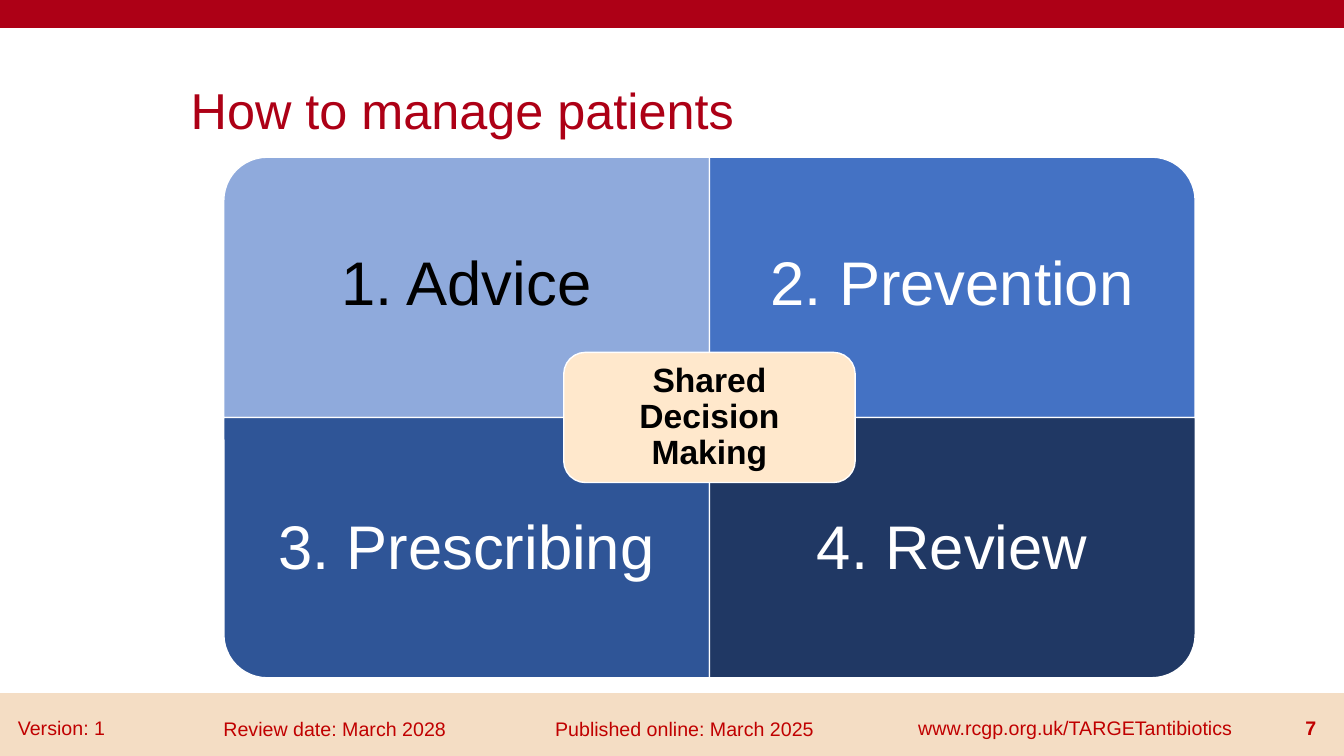
from dataclasses import dataclass

from pptx import Presentation
from pptx.dml.color import RGBColor
from pptx.enum.shapes import MSO_SHAPE
from pptx.enum.text import MSO_ANCHOR, PP_ALIGN
from pptx.util import Cm, Pt

COLORS = {
    "red": "AD0016", "footer": "C00000", "sand": "F4DDC4", "cream": "FFE8CC",
    "light": "8FAADC", "blue": "4472C4", "dark": "2F5597", "navy": "203864",
    "white": "FFFFFF", "black": "000000",
}
WIDTH, HEIGHT = 33.87, 19.05
CENTER_X, CENTER_Y = 17.88, 10.52
QUAD_W, QUAD_H = 12.24, 6.56
LABEL_H = QUAD_H * 0.75


@dataclass
class Quadrant:
    text: str
    col: int
    row: int
    rotation: int
    fill: str
    color: str = "white"


@dataclass
class FooterItem:
    text: str
    left: float
    top: float
    width: float
    align: PP_ALIGN = PP_ALIGN.LEFT
    bold: bool = False


QUADRANTS = [
    Quadrant("1. Advice", 0, 0, 270, "light", "black"),
    Quadrant("2. Prevention", 1, 0, 0, "blue"),
    Quadrant("3. Prescribing", 0, 1, 180, "dark"),
    Quadrant("4. Review", 1, 1, 90, "navy"),
]
FOOTER = [
    FooterItem("www.rcgp.org.uk/TARGETantibiotics", 22.89, 17.91, 9.27),
    FooterItem("7", 31.95, 17.91, 1.47, PP_ALIGN.RIGHT, True),
    FooterItem("Version: 1", 0.2, 17.91, 2.95),
    FooterItem("Review date: March 2028", 5.38, 17.93, 7.06),
    FooterItem("Published online: March 2025", 13.74, 17.94, 7.42),
]


def rgb(name: str) -> RGBColor:
    return RGBColor.from_string(COLORS[name])


def write(sp, text: str, *, size: float, color: str, bold: bool = False,
          align=PP_ALIGN.LEFT, anchor=MSO_ANCHOR.TOP, spacing: float = 1.0,
          inset: float | None = None) -> None:
    tf = sp.text_frame
    tf.word_wrap = True
    tf.vertical_anchor = anchor
    if inset is not None:
        tf.margin_left = tf.margin_right = tf.margin_top = tf.margin_bottom = Cm(inset)
    p = tf.paragraphs[0]
    p.alignment = align
    p.line_spacing = spacing
    r = p.add_run()
    r.text = text
    r.font.name = "Arial"
    r.font.size = Pt(size)
    r.font.bold = bold
    r.font.color.rgb = rgb(color)


def add_block(s, kind, left: float, top: float, width: float, height: float,
              fill: str, line: str):
    sp = s.shapes.add_shape(kind, Cm(left), Cm(top), Cm(width), Cm(height))
    sp.shadow.inherit = False
    sp.fill.solid()
    sp.fill.fore_color.rgb = rgb(fill)
    sp.line.color.rgb = rgb(line)
    sp.line.width = Pt(1)
    return sp


def add_quadrant(s, q: Quadrant) -> None:
    left = CENTER_X + (q.col - 1) * QUAD_W
    top = CENTER_Y + (q.row - 1) * QUAD_H
    w, h = (QUAD_H, QUAD_W) if q.rotation % 180 else (QUAD_W, QUAD_H)
    sp = add_block(s, MSO_SHAPE.ROUND_1_RECTANGLE, left + (QUAD_W - w) / 2,
                   top + (QUAD_H - h) / 2, w, h, q.fill, "white")
    sp.rotation = q.rotation
    label_top = top + q.row * (QUAD_H - LABEL_H)
    label = s.shapes.add_textbox(Cm(left), Cm(label_top), Cm(QUAD_W), Cm(LABEL_H))
    write(label, q.text, size=44, color=q.color, align=PP_ALIGN.CENTER, spacing=0.9,
          anchor=MSO_ANCHOR.TOP if q.row else MSO_ANCHOR.BOTTOM, inset=0.87)


def add_footer_item(s, item: FooterItem) -> None:
    sp = s.shapes.add_textbox(Cm(item.left), Cm(item.top), Cm(item.width), Cm(1.02))
    write(sp, item.text, size=14, color="footer", align=item.align, bold=item.bold)


def main() -> None:
    """Build the patient management slide."""
    prs = Presentation()
    prs.slide_width, prs.slide_height = Cm(WIDTH), Cm(HEIGHT)
    s = prs.slides.add_slide(prs.slide_layouts[5])

    add_block(s, MSO_SHAPE.RECTANGLE, 0, 17.47, WIDTH, 1.58, "sand", "sand")
    add_block(s, MSO_SHAPE.RECTANGLE, 0, -0.02, WIDTH, 0.71, "red", "red")
    for item in FOOTER:
        add_footer_item(s, item)

    title = s.shapes.title
    title.left, title.top, title.width, title.height = Cm(4.55), Cm(1.02), Cm(26.97), Cm(3.68)
    write(title, "How to manage patients", size=36, color="red",
          anchor=MSO_ANCHOR.MIDDLE, spacing=0.9)

    for q in QUADRANTS:
        add_quadrant(s, q)
    w, h = QUAD_W * 0.6, QUAD_H / 2
    hub = add_block(s, MSO_SHAPE.ROUNDED_RECTANGLE, CENTER_X - w / 2,
                    CENTER_Y - h / 2, w, h, "cream", "white")
    write(hub, "Shared Decision Making", size=24, color="black", bold=True,
          align=PP_ALIGN.CENTER, anchor=MSO_ANCHOR.MIDDLE, spacing=0.9, inset=0.25)
    prs.save("out.pptx")


if __name__ == "__main__":
    main()
